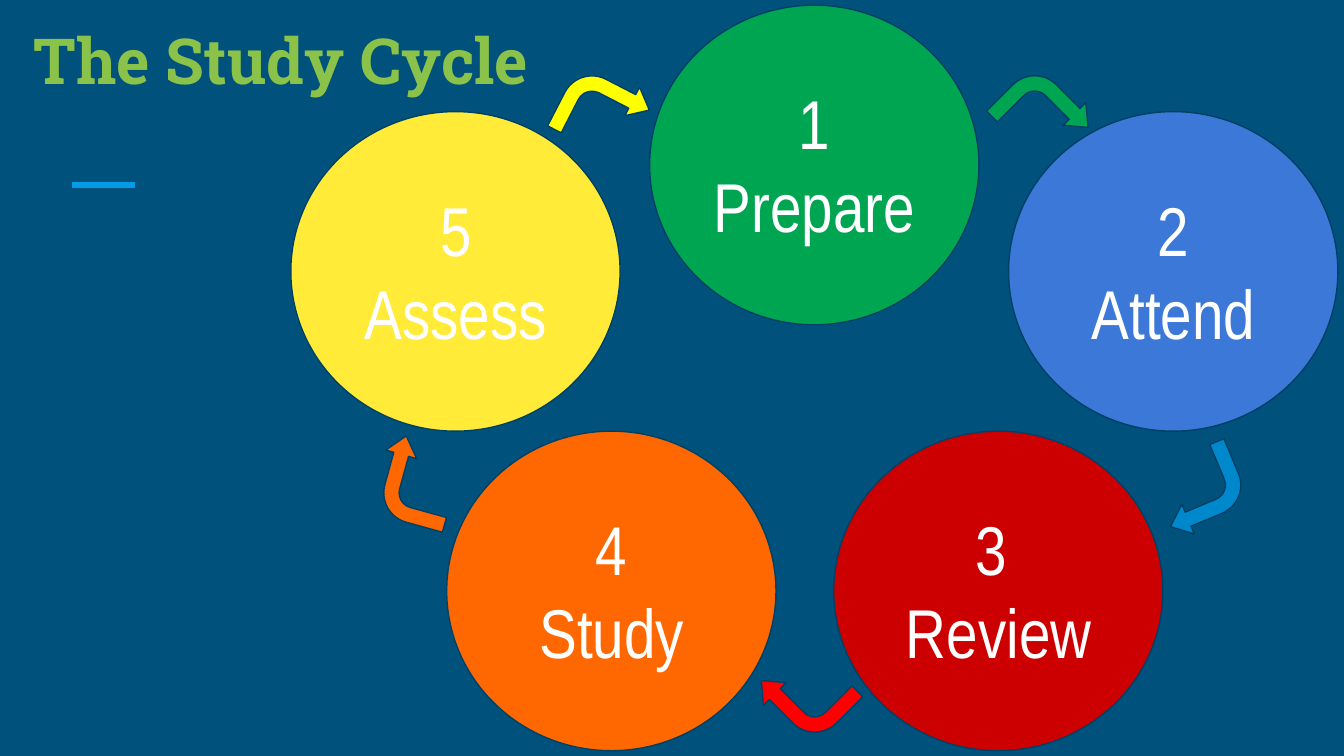
from pptx import Presentation
from pptx.dml.color import RGBColor
from pptx.enum.shapes import MSO_CONNECTOR, MSO_SHAPE
from pptx.enum.text import MSO_ANCHOR, PP_ALIGN
from pptx.util import Pt
from lxml import etree

ELLIPSE, BENT_ARROW = MSO_SHAPE.OVAL, MSO_SHAPE.BENT_ARROW
STRAIGHT = MSO_CONNECTOR.STRAIGHT
LEFT, CENTER, TOP = PP_ALIGN.LEFT, PP_ALIGN.CENTER, MSO_ANCHOR.TOP
A_NS = "http://schemas.openxmlformats.org/drawingml/2006/main"

COLORS = {
    "background": "00517C", "outline": "004065", "accent": "039BE5",
    "title": "8BC34A", "white": "FFFFFF", "green": "00A551",
    "blue": "3C78D8", "sky": "0088CC", "crimson": "CC0000", "red": "FF0000",
    "orange": "FF6700", "lemon": "FFEB38", "yellow": "FFFF00",
}


def rgb(name):
    return RGBColor.from_string(COLORS[name])


def add_filled(s, kind, x, y, w, h, color):
    sp = s.shapes.add_shape(kind, Pt(x), Pt(y), Pt(w), Pt(h))
    sp.shadow.inherit = False
    sp.fill.solid()
    sp.fill.fore_color.rgb = rgb(color)
    sp.line.color.rgb = rgb("outline")
    sp.line.width = Pt(0.75)
    return sp


prs = Presentation()
prs.slide_width, prs.slide_height = Pt(720), Pt(405)
s = prs.slides.add_slide(prs.slide_layouts[5])
s.background.fill.solid()
s.background.fill.fore_color.rgb = rgb("background")

title = s.shapes.title
title.left, title.top, title.width, title.height = Pt(10.8), Pt(4.3), Pt(578), Pt(55.4)
tf = title.text_frame
tf.text = "The Study Cycle"
tf.vertical_anchor = TOP
tf.margin_left = tf.margin_right = tf.margin_top = tf.margin_bottom = Pt(7.2)
p = tf.paragraphs[0]
p.alignment = LEFT
p.font.name, p.font.size, p.font.bold = "Roboto Slab", Pt(34), True
p.font.color.rgb = rgb("title")

rule = s.shapes.add_connector(STRAIGHT, Pt(38.6), Pt(99.1), Pt(72.3), Pt(99.1))
rule.line.color.rgb = rgb("accent")
rule.line.width = Pt(3)
etree.SubElement(rule._element.spPr, f"{{{A_NS}}}effectLst")

steps = [
    ("5", "Assess", 155.8, 59.8, "lemon"),
    ("4", "Study", 239.3, 231, "orange"),
    ("3 ", "Review", 446.6, 231, "crimson"),
    ("2", "Attend", 540.3, 59.8, "blue"),
    ("1", "Prepare", 348, 2.8, "green"),
]
for number, name, x, y, color in steps:
    add_filled(s, ELLIPSE, x, y, 176.4, 171.2, color)
    tb = s.shapes.add_textbox(Pt(x + 9.2), Pt(y + 33.3), Pt(158.4), Pt(104.4))
    tf = tb.text_frame
    tf.word_wrap = True
    tf.margin_left = tf.margin_right = tf.margin_top = tf.margin_bottom = Pt(7.2)
    tf.text = f"{number}\n{name}"
    for p in tf.paragraphs:
        p.alignment = CENTER
        p.font.name, p.font.size = "Arial Narrow", Pt(37)
        p.font.color.rgb = rgb("white")

arrows = [
    (536.4, 40.4, 45.1, "green"),
    (620.7, 242, 157.3, "sky"),
    (200.9, 237.7, 285.4, "orange"),
    (300.3, 38.9, 27.2, "yellow"),
    (409.7, 351.4, 225.1, "red"),
]
for x, y, angle, color in arrows:
    arrow = add_filled(s, BENT_ARROW, x, y, 44.6, 41, color)
    arrow.rotation = angle
    for i, value in enumerate([0.2, 0.21, 0.25, 0.4]):
        arrow.adjustments[i] = value

prs.save("out.pptx")
